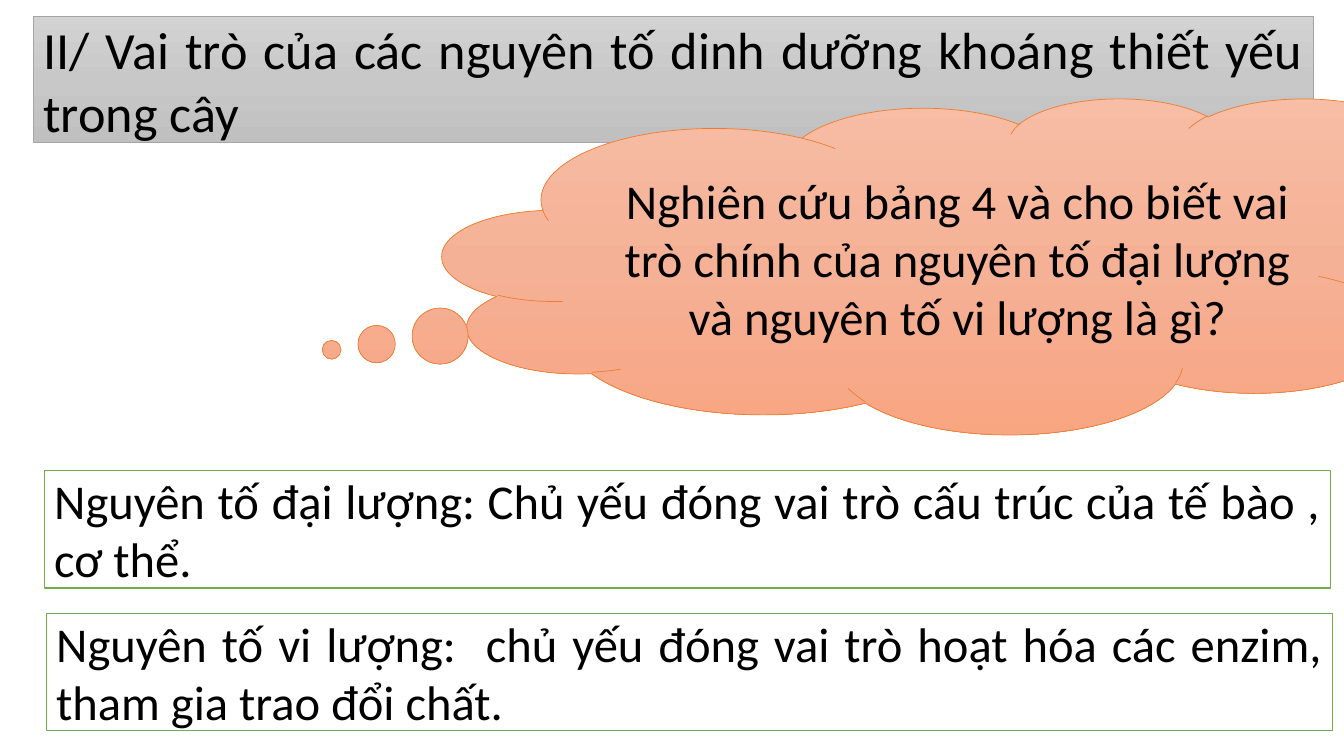
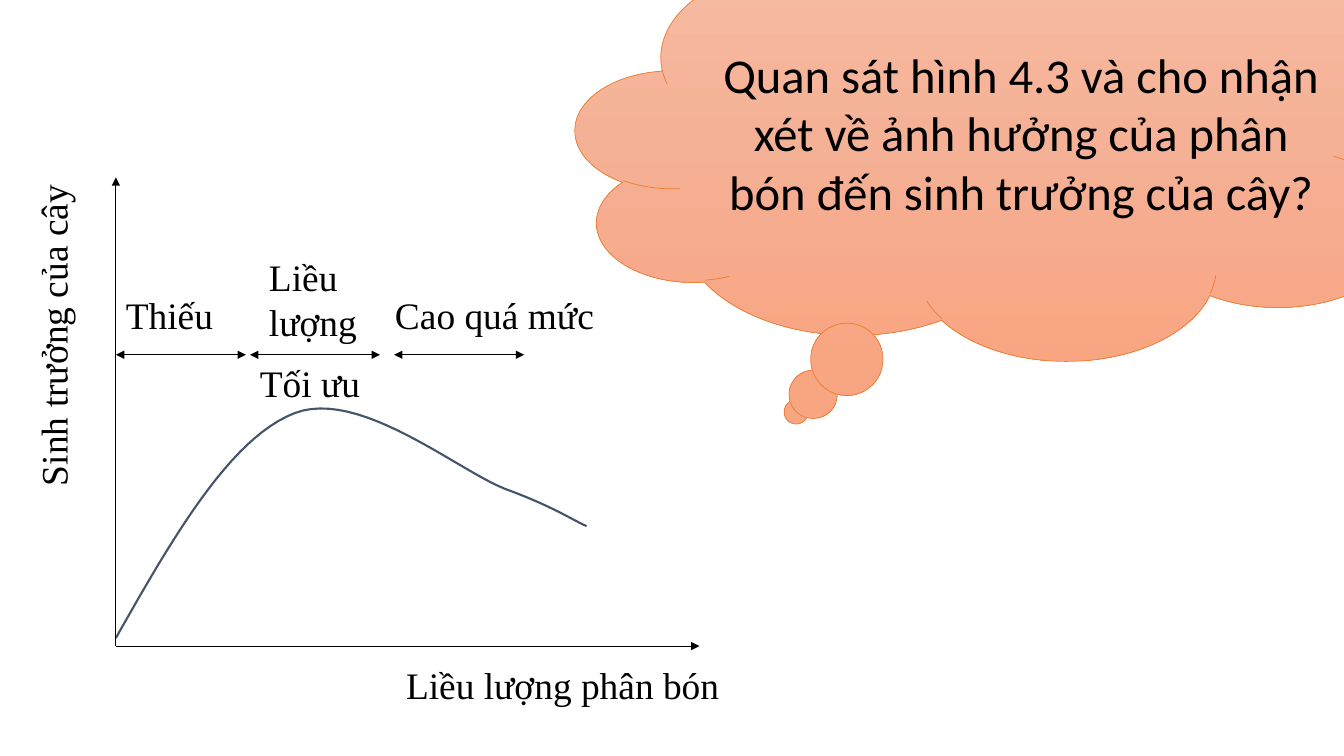
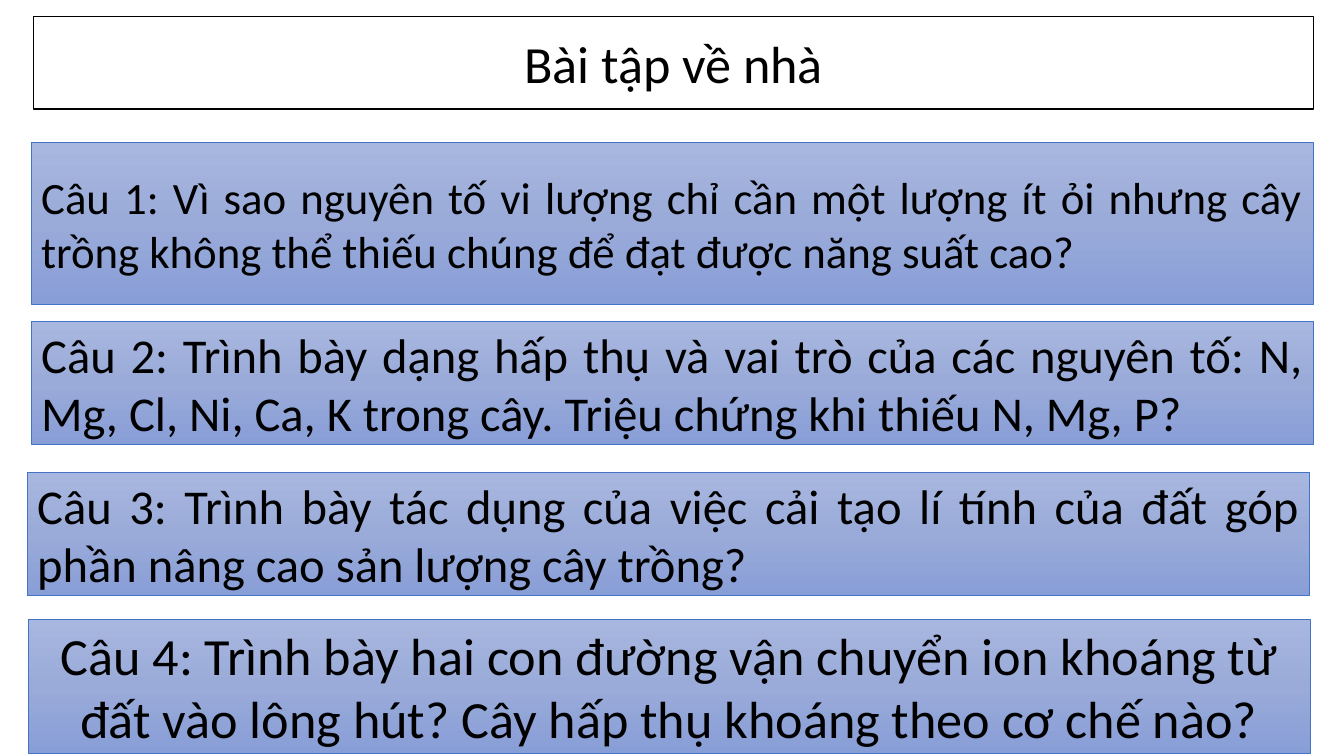
from copy import deepcopy
from dataclasses import dataclass

from lxml.etree import SubElement
from pptx import Presentation
from pptx.dml.color import RGBColor
from pptx.enum.shapes import MSO_CONNECTOR, MSO_SHAPE
from pptx.enum.text import MSO_ANCHOR, MSO_AUTO_SIZE, PP_ALIGN
from pptx.oxml.ns import qn
from pptx.util import Emu, Inches, Pt

# The grid: 80 columns by 45 rows of square cells
COLS, ROWS = 80, 45
CELL = Inches(40 / 3) / COLS

SANS, SERIF = "Calibri", "Times New Roman"
BLACK, SLATE = "000000", "44546A"
SMALL, BODY, LARGE, LABEL = 32, 34.7, 37.3, 26.7
MID, JUST = PP_ALIGN.CENTER, PP_ALIGN.JUSTIFY
RECT, CLOUD = MSO_SHAPE.RECTANGLE, MSO_SHAPE.CLOUD_CALLOUT


@dataclass(frozen=True)
class Look:
    fill: tuple[str, ...]
    line: str
    width: float


GREY = Look(("D2D2D2", "C8C8C8", "C0C0C0"), "A5A5A5", 0.5)
PEACH = Look(("F7BDA5", "F5B196", "F8A582"), "ED7D31", 0.5)
BLUE = Look(("A8B7DF", "9AABD9", "889ED7"), "4472C4", 0.5)
GREEN = Look(("FFFFFF",), "70AD47", 1)
PLAIN = Look(("FFFFFF",), BLACK, 1)


@dataclass(frozen=True)
class Box:
    """A filled shape with text; place and size in cells."""
    x: float
    y: float
    w: float
    h: float
    text: str
    look: Look
    size: float = BODY
    align: PP_ALIGN = JUST
    kind: MSO_SHAPE = RECT
    tip: tuple[float, ...] = ()


@dataclass(frozen=True)
class Label:
    """Loose text, one paragraph a line; place and size in cells."""
    x: float
    y: float
    w: float
    h: float
    lines: tuple[str, ...]
    turn: float = 0


@dataclass(frozen=True)
class Arrow:
    """A straight arrow between two points in cells."""
    x1: float
    y1: float
    x2: float
    y2: float
    both: bool = False


def hue(code: str) -> RGBColor:
    return RGBColor.from_string(code)


def cells(*spans: float) -> list[Emu]:
    return [Emu(round(span * CELL)) for span in spans]


def stroke(line, code: str, width: float) -> None:
    line.color.rgb = hue(code)
    line.width = Pt(width)


def add_run(para, text: str, font: str, size: float) -> None:
    run = para.add_run()
    run.text = text
    run.font.name = font
    run.font.size = Pt(size)
    run.font.color.rgb = hue(BLACK)


def paint(shape, look: Look) -> None:
    fill = shape.fill
    if len(look.fill) == 1:
        fill.solid()
        fill.fore_color.rgb = hue(look.fill[0])
    else:
        fill.gradient()
        fill.gradient_angle = 270
        stops = shape._element.spPr.find(".//" + qn("a:gsLst"))
        stops.append(deepcopy(stops[0]))  # a third stop
        for i, (stop, code) in enumerate(zip(fill.gradient_stops, look.fill)):
            stop.color.rgb = hue(code)
            stop.position = i / 2
    stroke(shape.line, look.line, look.width)
    shape.shadow.inherit = False


def draw_box(slide, box: Box) -> None:
    shape = slide.shapes.add_shape(box.kind, *cells(box.x, box.y, box.w, box.h))
    for i, value in enumerate(box.tip):
        shape.adjustments[i] = value
    paint(shape, box.look)
    frame = shape.text_frame
    frame.word_wrap = True
    frame.vertical_anchor = MSO_ANCHOR.MIDDLE
    para = frame.paragraphs[0]
    para.alignment = box.align
    add_run(para, box.text, SANS, box.size)


def draw_label(slide, label: Label) -> None:
    shape = slide.shapes.add_textbox(*cells(label.x, label.y, label.w, label.h))
    shape.rotation = label.turn
    frame = shape.text_frame
    frame.word_wrap = False
    frame.auto_size = MSO_AUTO_SIZE.SHAPE_TO_FIT_TEXT
    for i, text in enumerate(label.lines):
        para = frame.add_paragraph() if i else frame.paragraphs[0]
        add_run(para, text, SERIF, LABEL)


def draw_arrow(slide, arrow: Arrow) -> None:
    ends = cells(arrow.x1, arrow.y1, arrow.x2, arrow.y2)
    link = slide.shapes.add_connector(MSO_CONNECTOR.STRAIGHT, *ends)
    stroke(link.line, BLACK, 0.75)
    props = link._element.spPr
    for tag in ("a:headEnd", "a:tailEnd")[0 if arrow.both else 1:]:
        SubElement(props.find(qn("a:ln")), qn(tag), type="triangle")
    SubElement(props, qn("a:effectLst"))


def draw_curve(slide, knots: list[tuple[float, float]], steps: int = 24) -> None:
    """Trace joined cubic arcs: a start, then three knots an arc."""
    dots = []
    for k in range(0, len(knots) - 1, 3):
        arc = knots[k:k + 4]
        for n in range(1, steps + 1):
            t = n / steps
            s = 1 - t
            share = (s**3, 3 * s * s * t, 3 * s * t * t, t**3)
            dots.append(tuple(cells(*(
                sum(f * knot[axis] for f, knot in zip(share, arc))
                for axis in (0, 1)))))
    pen = slide.shapes.build_freeform(*cells(*knots[0]), scale=1.0)
    pen.add_line_segments(dots, close=False)
    shape = pen.convert_to_shape()
    shape.fill.background()
    stroke(shape.line, SLATE, 1.5)
    shape.shadow.inherit = False


def title(text: str, look: Look, high: float, align: PP_ALIGN) -> Box:
    return Box(2, 1, 76.2, high, text, look, LARGE, align)


# Slide 1: roles of the minerals
ROLES = [
    title("II/ Vai trò của các nguyên tố dinh dưỡng khoáng thiết yếu trong cây",
          GREY, 7.5, JUST),
    Box(26.34, 5.82, 66, 20,
        "Nghiên cứu bảng 4 và cho biết vai trò chính của nguyên tố đại lượng "
        "và nguyên tố vi lượng là gì?",
        PEACH, BODY, MID, CLOUD, (-0.6, 0.25)),
    Box(2.64, 28, 76.56, 7,
        "Nguyên tố đại lượng: Chủ yếu đóng vai trò cấu trúc của tế bào , cơ thể.",
        GREEN),
    Box(2.76, 36.5, 76.56, 7,
        "Nguyên tố vi lượng:  chủ yếu đóng vai trò hoạt hóa các enzim, "
        "tham gia trao đổi chất.", GREEN),
]

# Slide 2: growth against dose
ASK = Box(34.26, -4.44, 57.12, 25.86,
          "Quan sát hình 4.3 và cho nhận xét về ảnh hưởng của phân bón "
          "đến sinh trưởng của cây?",
          PEACH, BODY, MID, CLOUD, (-0.27, 0.62))
LEFT, BASE = 6.9, 38.46
SPAN, LEVEL = 7.74, 21.12
GROWTH = [(LEFT, 37.98),
          (10.26, 32.04), (13.68, 26.1), (17.52, 24.6),
          (21.36, 23.1), (27.18, 27.96), (30.06, 29.1),
          (33, 30.18), (34.08, 30.96), (34.92, 31.32)]
ARROWS = [
    Arrow(LEFT, BASE, LEFT, 10.56),
    Arrow(LEFT, BASE, 41.64, BASE),
    *(Arrow(x, LEVEL, x + SPAN, LEVEL, True) for x in (LEFT, 14.88, 23.46)),
]
LABELS = [
    Label(LEFT, 17.1, 6.42, 3.3, ("Thiếu",)),
    Label(15.42, 14.82, 6.48, 6, ("Liều", "lượng")),
    Label(14.88, LEVEL, 7.2, 3.3, ("Tối ưu",)),
    Label(22.92, 17.1, 13.14, 3.3, ("Cao quá mức",)),
    Label(-6.48, 18.24, 19.26, 3.3, ("Sinh trưởng của cây",), 270),
    Label(23.58, 39.12, 20.04, 3.3, ("Liều lượng phân bón",)),
]

# Slide 3: homework
WIDE = 76.32
TASKS = [
    title("Bài tập về nhà", PLAIN, 5.5, MID),
    Box(1.86, 8.5, WIDE, 9.6,
        "Câu 1: Vì sao nguyên tố vi lượng chỉ cần một lượng ít ỏi nhưng cây "
        "trồng không thể thiếu chúng để đạt được năng suất cao?", BLUE, SMALL),
    Box(1.86, 19.14, WIDE, 7.32,
        "Câu 2: Trình bày dạng hấp thụ và vai trò của các nguyên tố: N, Mg, "
        "Cl, Ni, Ca, K trong cây. Triệu chứng khi thiếu N, Mg, P?", BLUE),
    Box(1.62, 28.14, WIDE, 7.32,
        "Câu 3: Trình bày tác dụng của việc cải tạo lí tính của đất góp phần "
        "nâng cao sản lượng cây trồng?", BLUE),
    Box(1.68, 36.84, WIDE, 8,
        "Câu 4: Trình bày hai con đường vận chuyển ion khoáng từ đất vào lông "
        "hút? Cây hấp thụ khoáng theo cơ chế nào?", BLUE, LARGE, MID),
]


def main() -> None:
    deck = Presentation()
    deck.slide_width, deck.slide_height = cells(COLS, ROWS)
    blank = deck.slide_layouts[6]
    for group in (ROLES, [ASK], TASKS):
        slide = deck.slides.add_slide(blank)
        for box in group:
            draw_box(slide, box)

    # The graph on the second slide
    graph = deck.slides[1]
    draw_curve(graph, GROWTH)
    for arrow in ARROWS:
        draw_arrow(graph, arrow)
    for label in LABELS:
        draw_label(graph, label)
    deck.save("out.pptx")


if __name__ == "__main__":
    main()
